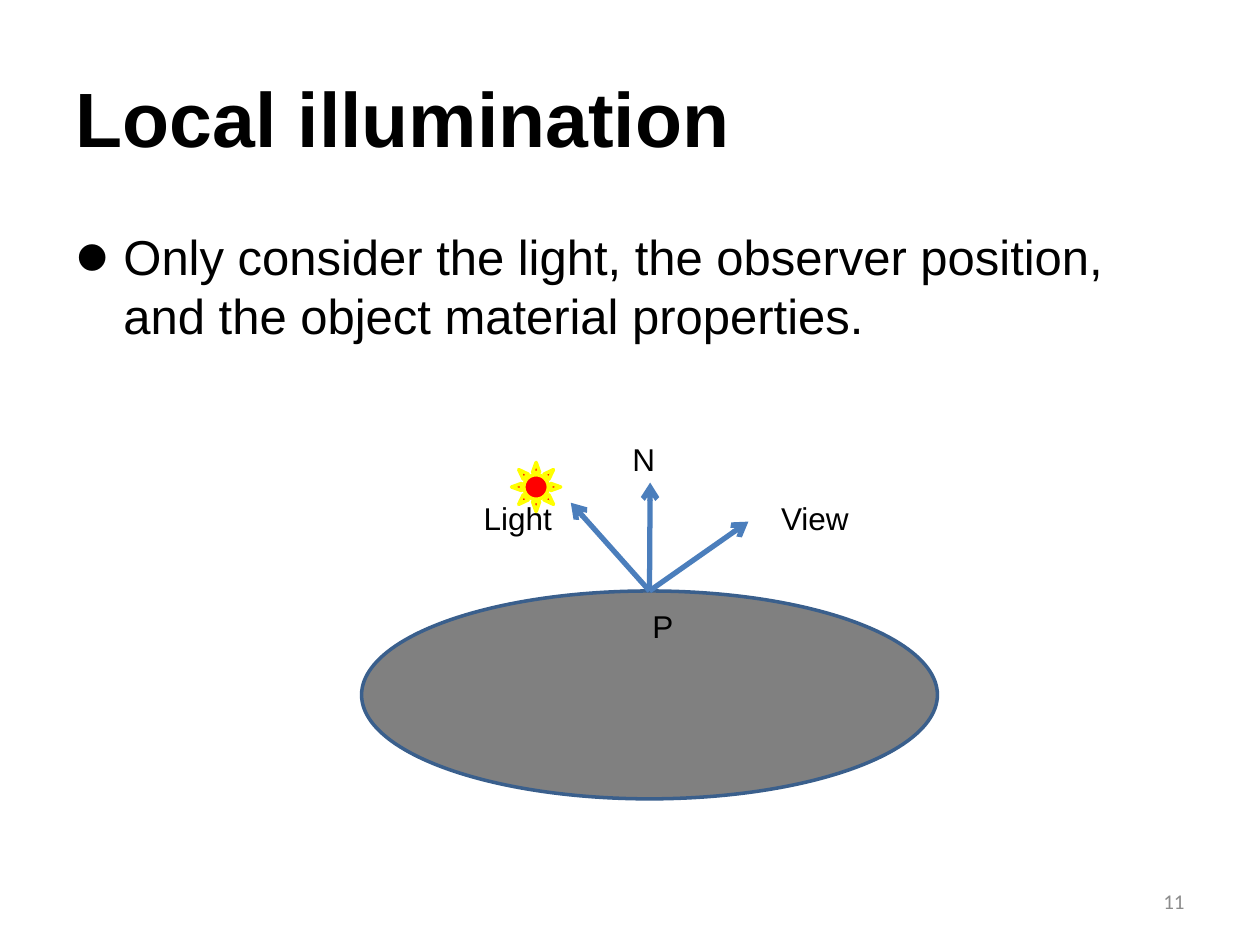
from lxml.etree import SubElement
from pptx import Presentation
from pptx.dml.color import RGBColor
from pptx.enum.shapes import MSO_CONNECTOR, MSO_SHAPE
from pptx.enum.text import MSO_ANCHOR, PP_ALIGN
from pptx.oxml import parse_xml
from pptx.oxml.ns import nsdecls, qn
from pptx.util import Inches, Pt

BLACK = RGBColor(0x00, 0x00, 0x00)
GREY = RGBColor(0x80, 0x80, 0x80)
PALE = RGBColor(0x8C, 0x8C, 0x8C)
NAVY = RGBColor(0x3A, 0x5F, 0x8C)
BLUE = RGBColor(0x4B, 0x7E, 0xBC)
RED = RGBColor(0xFF, 0x00, 0x00)
YELLOW = RGBColor(0xFF, 0xFF, 0x00)

TITLE = "Local illumination"
BODY = ("Only consider the light, the observer position, "
        "and the object material properties.")
NUMBER = "11"
FONTS = {
    "title": {"name": "Arial", "size": Pt(44), "bold": True},
    "body": {"name": "Arial", "size": Pt(28)},
    "label": {"name": "Arial", "size": Pt(18)},
    "number": {"name": "Calibri", "size": Pt(12)},
}
SURFACE = (2.87, 4.69, 4.57, 1.65)
SUN = (4.06, 3.67, 0.39, 0.39)
TIPS = [(5.16, 3.83), (4.53, 3.99), (5.94, 4.14)]
LABELS = [
    ("N", (4.92, 3.44, 0.47, 0.4)),
    ("Light", (3.74, 3.91, 0.95, 0.4)),
    ("View", (6.1, 3.91, 0.79, 0.4)),
    ("P", (5.08, 4.77, 0.47, 0.4)),
]
SHADOW = f"""<a:effectLst {nsdecls('a')}>
  <a:outerShdw blurRad="38100" dist="38100" dir="2700000" algn="tl">
    <a:srgbClr val="000000"><a:alpha val="43000"/></a:srgbClr>
  </a:outerShdw>
</a:effectLst>"""


def place(shape, box):
    shape.left, shape.top, shape.width, shape.height = map(Inches, box)


def write(shape, text, style, color=BLACK, anchor=MSO_ANCHOR.TOP,
          align=PP_ALIGN.LEFT):
    frame = shape.text_frame
    frame.word_wrap = True
    frame.vertical_anchor = anchor
    para = frame.paragraphs[0]
    para.alignment = align
    run = para.add_run()
    run.text = text
    for key, value in FONTS[style].items():
        setattr(run.font, key, value)
    run.font.color.rgb = color
    return para


def label(slide, text, box, *args, **options):
    shape = slide.shapes.add_textbox(*map(Inches, box))
    write(shape, text, *args, **options)


def bullet(para):
    props = para._p.get_or_add_pPr()
    props.set("marL", str(Inches(0.38)))
    props.set("indent", str(-Inches(0.38)))
    SubElement(props, qn("a:buSzPct")).set("val", "200000")
    SubElement(props, qn("a:buFont")).set("typeface", "Arial")
    SubElement(props, qn("a:buChar")).set("char", "•")


def solid(slide, kind, box, fill, line):
    shape = slide.shapes.add_shape(kind, *map(Inches, box))
    shape.shadow.inherit = False
    shape.fill.solid()
    shape.fill.fore_color.rgb = fill
    shape.line.color.rgb = line
    shape.line.width = Pt(2)
    return shape


def arrow(slide, source, tip):
    x, y = map(Inches, tip)
    ray = slide.shapes.add_connector(MSO_CONNECTOR.STRAIGHT, x, y, x, y)
    ray.begin_connect(source, 0)
    ray.line.color.rgb = BLUE
    ray.line.width = Pt(3)
    SubElement(ray.line._get_or_add_ln(), qn("a:tailEnd")).set("type", "arrow")
    SubElement(ray._element.spPr, qn("a:effectLst"))


def main():
    deck = Presentation()
    deck.slide_width, deck.slide_height = Inches(10), Inches(7.5)
    slide = deck.slides.add_slide(deck.slide_layouts[1])

    title, body = slide.placeholders
    place(title, (0.5, 0.3, 7.18, 1.25))
    para = write(title, TITLE, "title", anchor=MSO_ANCHOR.MIDDLE)
    fill = para.runs[0].font._element.find(qn("a:solidFill"))
    fill.addnext(parse_xml(SHADOW))

    place(body, (0.5, 1.75, 9, 4.95))
    para = write(body, BODY, "body")
    para.space_before = Pt(0)
    bullet(para)

    label(slide, NUMBER, (7.17, 6.95, 2.33, 0.4), "number", PALE,
          MSO_ANCHOR.MIDDLE, PP_ALIGN.RIGHT)

    surface = solid(slide, MSO_SHAPE.OVAL, SURFACE, GREY, NAVY)
    for tip in TIPS:
        arrow(slide, surface, tip)
    for text, box in LABELS:
        label(slide, text, box, "label")
    solid(slide, MSO_SHAPE.SUN, SUN, RED, YELLOW)

    deck.save("out.pptx")


if __name__ == "__main__":
    main()
